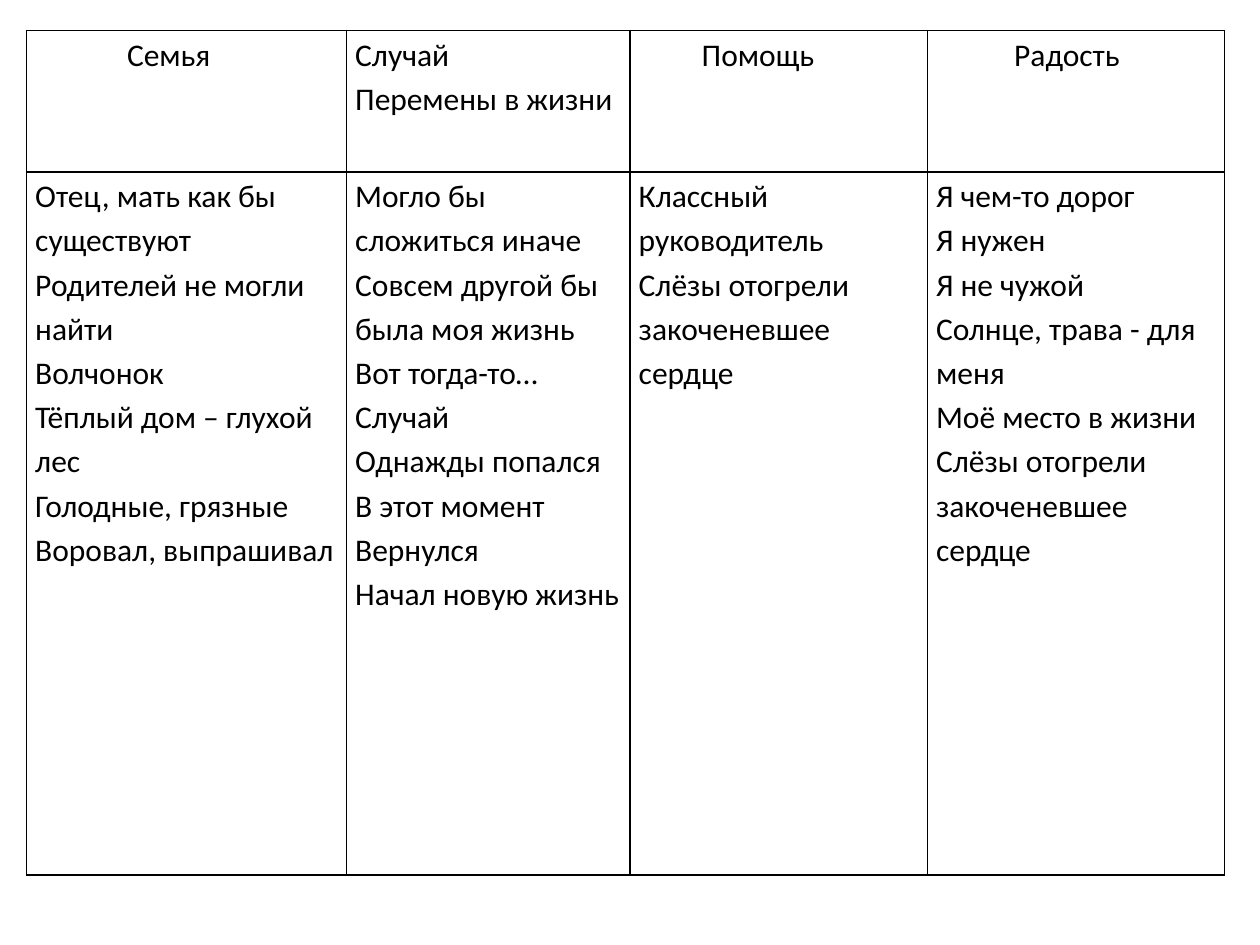
from dataclasses import dataclass

from lxml.etree import SubElement
from pptx import Presentation
from pptx.dml.color import RGBColor
from pptx.oxml.ns import qn
from pptx.table import _Cell as Cell
from pptx.util import Inches, Pt

SLIDE_WIDTH, SLIDE_HEIGHT = 10, 7.5
TABLE_LEFT, TABLE_TOP = 0.021, 0.032
HEADER_SHARE, BODY_SHARE = 0.15, 0.744
CELL_MARGIN = 0.07
INK = "000000"


@dataclass
class Theme:
    width: float
    indent: float
    heading: list[str]
    phrases: list[str]


THEMES = [
    Theme(0.254, 0.073, ["Семья"], [
        "Отец, мать как бы существуют",
        "Родителей не могли найти",
        "Волчонок",
        "Тёплый дом – глухой лес",
        "Голодные, грязные",
        "Воровал, выпрашивал",
    ]),
    Theme(0.225, 0, ["Случай", "Перемены в жизни"], [
        "Могло бы сложиться иначе",
        "Совсем другой бы была моя жизнь",
        "Вот тогда-то…",
        "Случай",
        "Однажды попался",
        "В этот момент",
        "Вернулся",
        "Начал новую жизнь",
    ]),
    Theme(0.236, 0.05, ["Помощь"], [
        "Классный руководитель",
        "Слёзы отогрели закоченевшее сердце",
    ]),
    Theme(0.236, 0.062, ["Радость"], [
        "Я чем-то дорог",
        "Я нужен",
        "Я не чужой",
        "Солнце, трава - для меня",
        "Моё место в жизни",
        "Слёзы отогрели закоченевшее сердце",
    ]),
]


def across(share: float) -> int:
    return Inches(SLIDE_WIDTH * share)


def down(share: float) -> int:
    return Inches(SLIDE_HEIGHT * share)


def color(value: str) -> RGBColor:
    return RGBColor.from_string(value)


def draw_borders(cell: Cell) -> None:
    properties = cell._tc.get_or_add_tcPr()
    for position, side in enumerate(("lnL", "lnR", "lnT", "lnB")):
        line = SubElement(properties, qn(f"a:{side}"), w=str(Pt(1)))
        fill = SubElement(line, qn("a:solidFill"))
        SubElement(fill, qn("a:srgbClr"), val=INK)
        properties.insert(position, line)


def fill_cell(cell: Cell, lines: list[str], indent: float = 0) -> None:
    cell.fill.background()
    cell.margin_left = cell.margin_right = Inches(CELL_MARGIN)
    cell.margin_top = cell.margin_bottom = 0
    draw_borders(cell)
    frame = cell.text_frame
    for number, line in enumerate(lines):
        para = frame.add_paragraph() if number else frame.paragraphs[0]
        para.line_spacing = 1.15
        if indent:
            para._p.get_or_add_pPr().set("marL", str(across(indent)))
        span = para.add_run()
        span.text = line
        span.font.name = "Calibri"
        span.font.size = Pt(18)
        span.font.color.rgb = color(INK)


def main() -> None:
    deck = Presentation()
    deck.slide_width = Inches(SLIDE_WIDTH)
    deck.slide_height = Inches(SLIDE_HEIGHT)
    slide = deck.slides.add_slide(deck.slide_layouts[6])
    table = slide.shapes.add_table(
        2, len(THEMES), across(TABLE_LEFT), down(TABLE_TOP),
        across(sum(theme.width for theme in THEMES)),
        down(HEADER_SHARE + BODY_SHARE),
    ).table
    table.first_row = table.horz_banding = False
    for row, share in zip(table.rows, (HEADER_SHARE, BODY_SHARE)):
        row.height = down(share)
    for index, theme in enumerate(THEMES):
        table.columns[index].width = across(theme.width)
        fill_cell(table.cell(0, index), theme.heading, theme.indent)
        fill_cell(table.cell(1, index), theme.phrases)
    deck.save("out.pptx")


if __name__ == "__main__":
    main()
